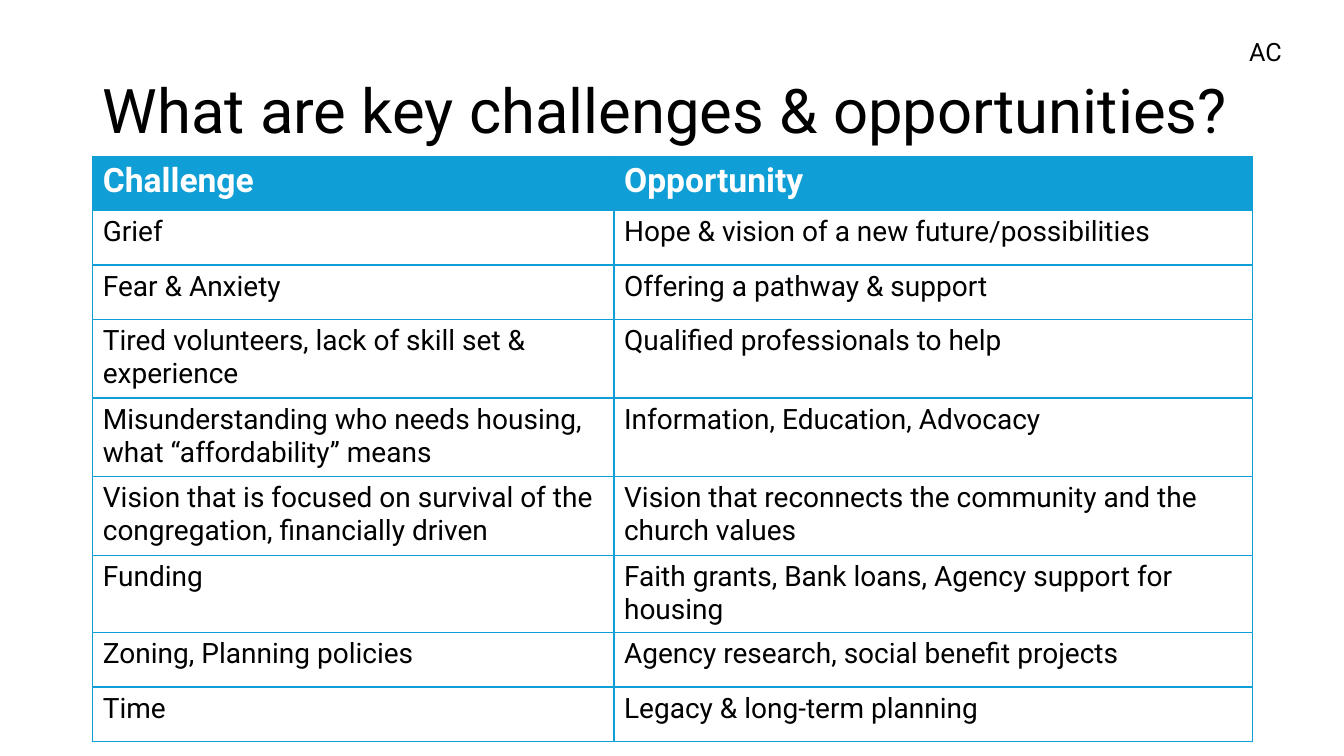
"""Builds a slide with a table of challenges and opportunities."""
from pptx import Presentation
from pptx import util as u
from pptx.dml.color import RGBColor
from pptx.enum import text
from pptx.oxml import ns, xmlchemy as xc

TITLE = "What are key challenges & opportunities?"
TAG = "AC"
ROWS = [
    ("Challenge", "Opportunity", 0.54),
    ("Grief", "Hope & vision of a new future/possibilities", 0.54),
    ("Fear & Anxiety", "Offering a pathway & support", 0.54),
    ("Tired volunteers, lack of skill set & experience",
     "Qualified professionals to help", 0.78),
    ("Misunderstanding who needs housing, what “affordability” means",
     "Information, Education, Advocacy", 0.78),
    ("Vision that is focused on survival of the congregation, financially driven",
     "Vision that reconnects the community and the church values", 0.78),
    ("Funding", "Faith grants, Bank loans, Agency support for housing", 0.75),
    ("Zoning, Planning policies", "Agency research, social benefit projects", 0.54),
    ("Time", "Legacy & long-term planning", 0.54),
]
COLS = (5.17, 6.33)
LEFT, TOP = 0.92, 1.55
FONT = "Roboto"
BLUE = RGBColor(0x0F, 0x9E, 0xD5)
BLACK = RGBColor(0, 0, 0)
WHITE = RGBColor(255, 255, 255)


def write(frame, words, size, color=BLACK, bold=False):
    run = frame.paragraphs[0].add_run()
    run.text = words
    font = run.font
    font.name, font.size, font.bold = FONT, u.Pt(size), bold
    font.color.rgb = color


def add_text(slide, box, words, size):
    frame = slide.shapes.add_textbox(*map(u.Inches, box)).text_frame
    frame.word_wrap = True
    write(frame, words, size)
    return frame


def edge(cell):
    props = cell._tc.get_or_add_tcPr()
    for spot, side in enumerate(("lnL", "lnR", "lnT", "lnB")):
        line = xc.OxmlElement(f"a:{side}")
        line.set("w", str(u.Pt(1)))
        fill = xc.OxmlElement("a:solidFill")
        color = xc.OxmlElement("a:srgbClr")
        color.set("val", str(BLUE))
        fill.append(color)
        line.append(fill)
        props.insert(spot, line)


def add_grid(slide):
    high = sum(row[-1] for row in ROWS)
    box = map(u.Inches, (LEFT, TOP, sum(COLS), high))
    frame = slide.shapes.add_table(len(ROWS), len(COLS), *box)
    grid = frame.table
    grid.horz_banding = False
    style = grid._tbl.tblPr.find(ns.qn("a:tableStyleId"))
    style.text = "{2D5ABB26-0587-4C30-8999-92F81FD0307C}"
    for col, wide in zip(grid.columns, COLS):
        col.width = u.Inches(wide)
    for i, (*words, high) in enumerate(ROWS):
        grid.rows[i].height = u.Inches(high)
        for cell, word in zip(grid.rows[i].cells, words):
            if i == 0:
                cell.fill.solid()
                cell.fill.fore_color.rgb = BLUE
                write(cell.text_frame, word, 24, WHITE, True)
            else:
                cell.fill.background()
                write(cell.text_frame, word, 20)
            edge(cell)


def main():
    deck = Presentation()
    deck.slide_width, deck.slide_height = u.Inches(13.33), u.Inches(7.5)
    slide = deck.slides.add_slide(deck.slide_layouts[6])
    head = add_text(slide, (LEFT, 0.4, sum(COLS), 1.45), TITLE, 44)
    head.vertical_anchor = text.MSO_ANCHOR.MIDDLE
    head.paragraphs[0].line_spacing = 0.9
    add_grid(slide)
    add_text(slide, (12.29, 0.31, 0.79, 0.4), TAG, 18)
    deck.save("out.pptx")


if __name__ == "__main__":
    main()
